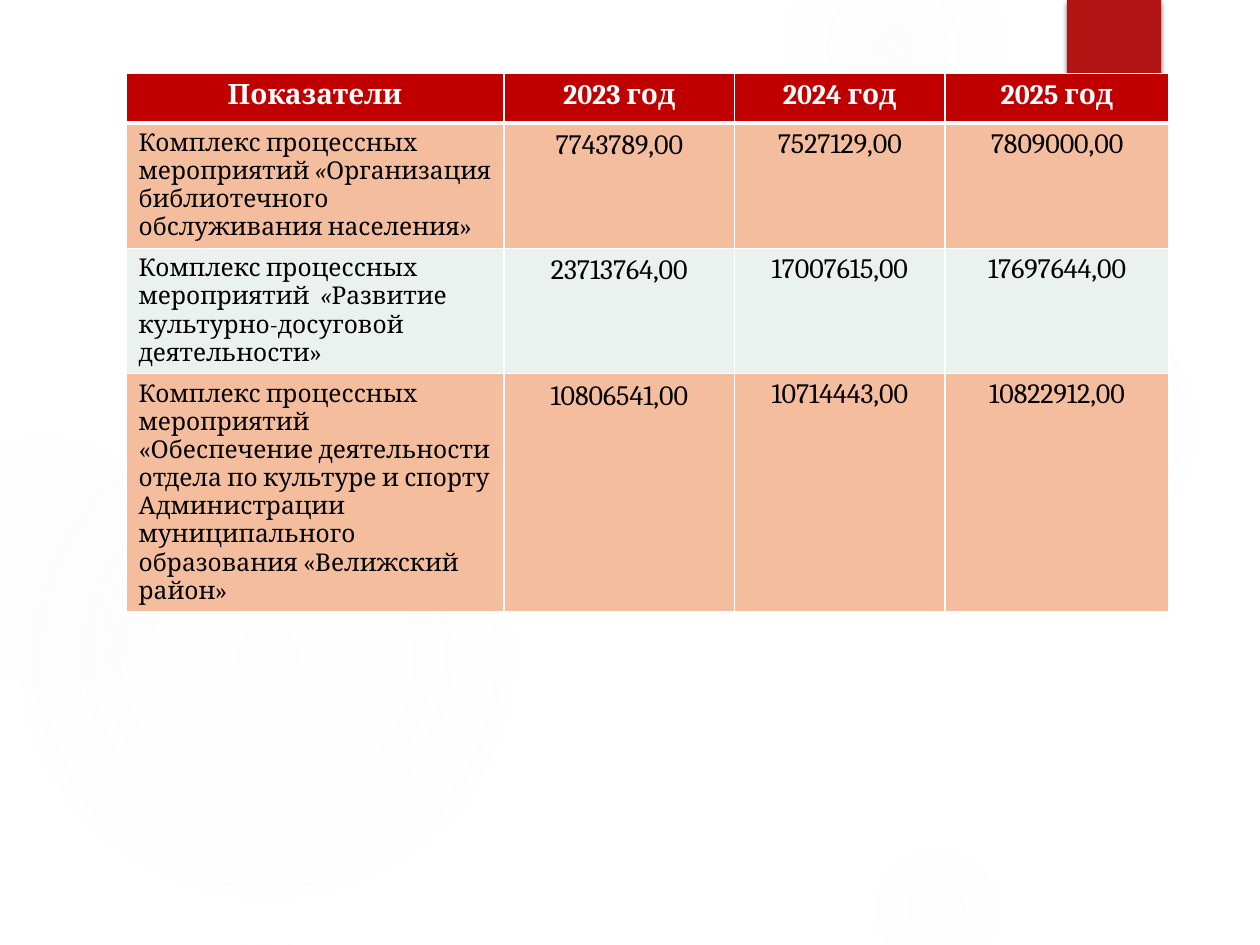
from lxml import etree
from pptx import Presentation
from pptx.dml.color import RGBColor
from pptx.enum.shapes import MSO_SHAPE as Shape
from pptx.enum.text import PP_ALIGN as Align
from pptx.oxml import parse_xml
from pptx.oxml.ns import nsdecls, qn
from pptx.util import Cm, Pt

WHITE = RGBColor(0xFF, 0xFF, 0xFF)
BLACK = RGBColor(0x00, 0x00, 0x00)
RED = RGBColor(0xB0, 0x15, 0x13)
HEADER_RED = RGBColor(0xC0, 0x00, 0x00)
PEACH = RGBColor(0xF4, 0xBD, 0x9E)
PALE_GREEN = RGBColor(0xEB, 0xF1, 0xEE)
GLOW_GREY = RGBColor(0xF3, 0xF3, 0xF3)
FONT = "Cambria"

# left, top, diameter, then (position, opacity) stops in percent
GLOWS = [
    (17.5, 4.65, 7.82, [(0, 7), (36, 6), (69, 0)]),
    (15.8, -1.27, 4.45, [(0, 14), (36, 7), (73, 0)]),
    (17.5, 16.94, 2.74, [(0, 9), (36, 5), (66, 0)]),
    (-0.43, 7.42, 11.63, [(0, 11), (36, 10), (75, 0)]),
    (-2.34, 8.05, 6.55, [(0, 8), (36, 8), (72, 0)]),
]
COLUMN_WIDTHS = [7.62, 4.65, 4.24, 4.52]
ROW_HEIGHTS = [1, 2.51, 2.51, 4.8]
HEADERS = ["Показатели", "2023 год", "2024 год", "2025 год"]
# label runs (every second one is italic), then yearly amounts
ROWS = [
    (["Комплекс процессных мероприятий", " «",
      "Организация библиотечного обслуживания населения»"],
     ["7743789,00", "7527129,00", "7809000,00"]),
    (["Комплекс процессных мероприятий ", " «",
      "Развитие культурно-досуговой деятельности»"],
     ["23713764,00", "17007615,00", "17697644,00"]),
    (["Комплекс процессных мероприятий  «Обеспечение деятельности отдела по "
      "культуре и спорту Администрации муниципального образования "
      "«Велижский район»"],
     ["10806541,00", "10714443,00", "10822912,00"]),
]


def add_plain_shape(slide, kind, left, top, width, height):
    """Add a preset shape without outline or shadow."""
    shape = slide.shapes.add_shape(kind, Cm(left), Cm(top), Cm(width), Cm(height))
    shape.shadow.inherit = False
    shape.line.fill.background()
    return shape


def add_glow(slide, left, top, diameter, stops):
    """Add a circle that fades out from its centre."""
    circle = add_plain_shape(slide, Shape.OVAL, left, top, diameter, diameter)
    circle.fill.background()
    stop_xml = "".join(
        f'<a:gs pos="{position * 1000}"><a:srgbClr val="{GLOW_GREY}">'
        f'<a:alpha val="{opacity * 1000}"/></a:srgbClr></a:gs>'
        for position, opacity in stops)
    gradient = parse_xml(
        f'<a:gradFill {nsdecls("a")}><a:gsLst>{stop_xml}</a:gsLst>'
        '<a:path path="circle"><a:fillToRect l="50000" t="50000" r="50000" '
        'b="50000"/></a:path></a:gradFill>')
    properties = circle._element.spPr
    properties.replace(properties.find(qn("a:noFill")), gradient)


def add_bookmark(slide):
    """Add the red tab with a soft shadow at the top edge."""
    tab = add_plain_shape(slide, Shape.RECTANGLE, 21.51, 0, 1.9, 3.05)
    tab.fill.solid()
    tab.fill.fore_color.rgb = RED
    effects = tab._element.spPr.find(qn("a:effectLst"))
    effects.append(parse_xml(
        f'<a:outerShdw {nsdecls("a")} blurRad="{Pt(3)}" dist="{Pt(2)}" '
        f'dir="5400000" rotWithShape="0"><a:srgbClr val="{BLACK}">'
        '<a:alpha val="45000"/></a:srgbClr></a:outerShdw>'))


def style_cell(cell, color, bottom_width=1, top_width=1):
    """Give a cell white borders and a solid fill."""
    properties = cell._tc.get_or_add_tcPr()
    widths = {"lnL": 1, "lnR": 1, "lnT": top_width, "lnB": bottom_width}
    for side, width in widths.items():
        border = etree.SubElement(properties, qn(f"a:{side}"), w=str(Pt(width)))
        fill = etree.SubElement(border, qn("a:solidFill"))
        etree.SubElement(fill, qn("a:srgbClr"), val=str(WHITE))
    cell.fill.solid()
    cell.fill.fore_color.rgb = color


def write_cell(cell, runs, size, color=BLACK, bold=False, align=Align.CENTER):
    """Write runs into a cell, every second one in italics."""
    paragraph = cell.text_frame.paragraphs[0]
    paragraph.alignment = align
    for index, text in enumerate(runs):
        run = paragraph.add_run()
        run.text = text
        run.font.name = FONT
        run.font.size = Pt(size)
        run.font.bold = bold
        run.font.italic = index % 2 == 1
        run.font.color.rgb = color
    return paragraph


def add_budget_table(slide):
    """Add the table of yearly amounts."""
    table = slide.shapes.add_table(
        len(ROW_HEIGHTS), len(COLUMN_WIDTHS), Cm(2.54), Cm(1.48),
        Cm(sum(COLUMN_WIDTHS)), Cm(sum(ROW_HEIGHTS))).table
    for column, width in zip(table.columns, COLUMN_WIDTHS):
        column.width = Cm(width)
    for row, height in zip(table.rows, ROW_HEIGHTS):
        row.height = Cm(height)
    for index, header in enumerate(HEADERS):
        cell = table.cell(0, index)
        style_cell(cell, HEADER_RED, bottom_width=3)
        write_cell(cell, [header], 16, WHITE, bold=True)
    for row, (label, amounts) in enumerate(ROWS, 1):
        color = PEACH if row % 2 else PALE_GREEN
        top_width = 3 if row == 1 else 1
        cell = table.cell(row, 0)
        style_cell(cell, color, top_width=top_width)
        write_cell(cell, label, 14, align=Align.LEFT)
        for column, amount in enumerate(amounts, 1):
            cell = table.cell(row, column)
            style_cell(cell, color, top_width=top_width)
            paragraph = write_cell(cell, [amount], 16)
            if column > 1:
                paragraph.line_spacing = 1.15
                cell.margin_left = cell.margin_right = 0
                cell.margin_top = cell.margin_bottom = 0


def main():
    """Build and save the slide."""
    presentation = Presentation()
    presentation.slide_width, presentation.slide_height = Cm(25.4), Cm(19.05)
    slide = presentation.slides.add_slide(presentation.slide_layouts[6])
    for glow in GLOWS:
        add_glow(slide, *glow)
    add_bookmark(slide)
    add_budget_table(slide)
    presentation.save("out.pptx")


if __name__ == "__main__":
    main()
